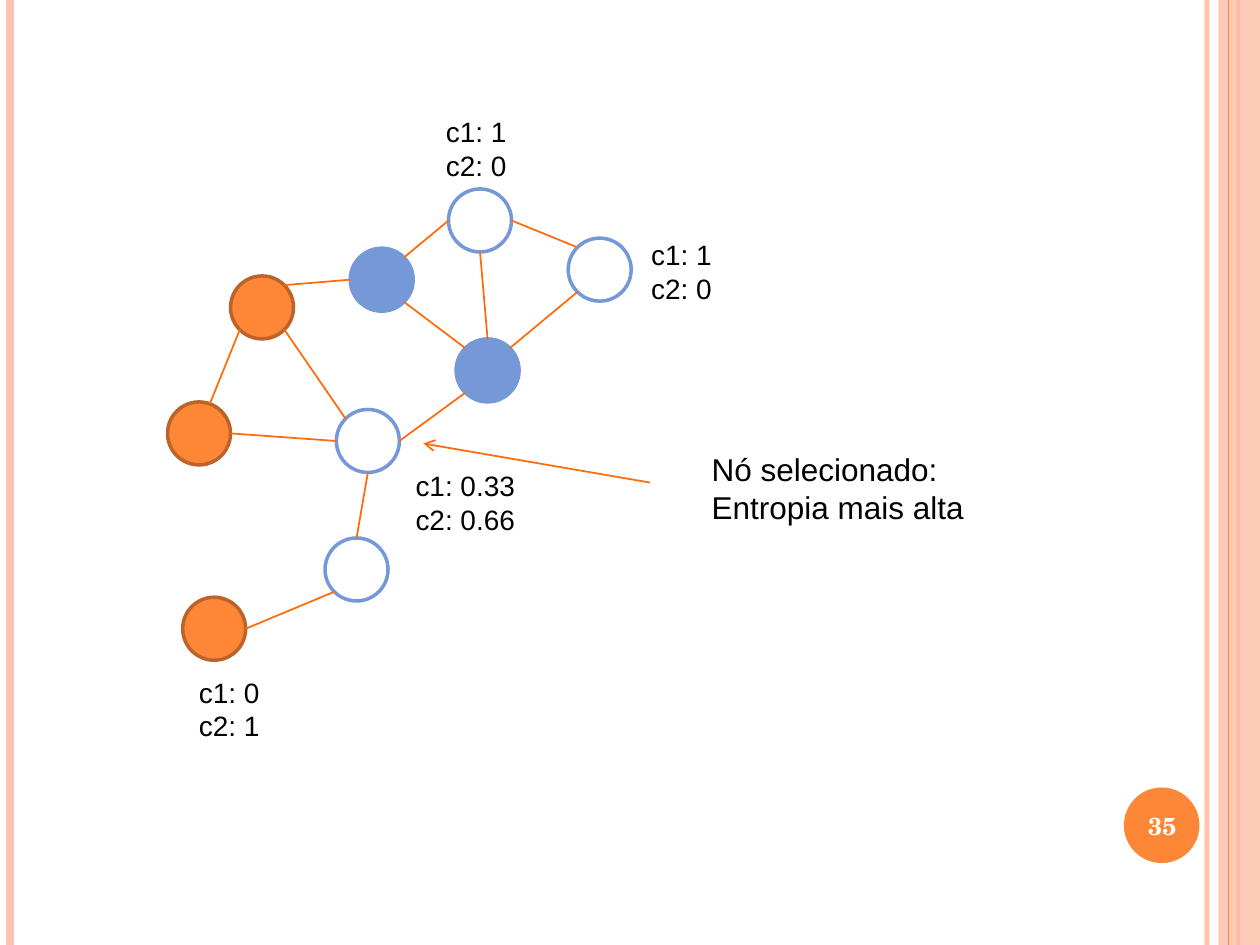
from math import cos, radians, sin

from lxml import etree
from pptx import Presentation
from pptx.dml.color import RGBColor
from pptx.enum.shapes import MSO_CONNECTOR, MSO_SHAPE
from pptx.enum.text import MSO_ANCHOR, MSO_AUTO_SIZE, PP_ALIGN
from pptx.oxml.ns import qn
from pptx.util import Inches, Pt

STRAIGHT = MSO_CONNECTOR.STRAIGHT
OVAL, RECTANGLE = MSO_SHAPE.OVAL, MSO_SHAPE.RECTANGLE
MIDDLE, CENTER = MSO_ANCHOR.MIDDLE, PP_ALIGN.CENTER
FIT_SHAPE = MSO_AUTO_SIZE.SHAPE_TO_FIT_TEXT

ORANGE = RGBColor(0xFE, 0x86, 0x37)
BROWN = RGBColor(0xBC, 0x63, 0x29)
BLUE = RGBColor(0x75, 0x98, 0xD9)
PINK = RGBColor(0xFE, 0xC3, 0xAE)
EDGE = RGBColor(0xFF, 0x6B, 0x0A)
BLACK = RGBColor(0, 0, 0)
WHITE = RGBColor(0xFF, 0xFF, 0xFF)

SLIDE_WIDTH, SLIDE_HEIGHT = 10, 7.5
NODE_SIZE = 0.5

BACK_STRIPES = [(9.58, PINK, 3, 93), (0.08, PINK, 4.5, 100), (9.83, ORANGE, 1.5, 100)]
FRONT_STRIPE = (9.75, ORANGE, 0.75, 100)
BAND = (9.67, 0, 0.33, SLIDE_HEIGHT)
BADGE = (8.92, 6.25, 0.6, 0.6)
PAGE_NUMBER = ("35", (8.89, 6.27, 0.67, 0.57))

NODE_STYLES = {"class 2": (ORANGE, BROWN), "class 1": (BLUE, BLUE), "open": (None, BLUE)}
NODES = {
    "upper orange": (1.83, 2.19, "class 2"),
    "left orange": (1.33, 3.19, "class 2"),
    "bottom orange": (1.45, 4.74, "class 2"),
    "upper blue": (2.78, 1.97, "class 1"),
    "lower blue": (3.62, 2.69, "class 1"),
    "top": (3.56, 1.5, "open"),
    "right": (4.51, 1.89, "open"),
    "selected": (2.67, 3.25, "open"),
    "lower": (2.58, 4.27, "open"),
}
EDGES = [
    ("upper orange", 315, "selected", 135),
    ("left orange", 0, "selected", 180),
    ("upper orange", 45, "upper blue", 180),
    ("upper blue", 315, "lower blue", 135),
    ("selected", 0, "lower blue", 225),
    ("upper blue", 45, "top", 180),
    ("upper orange", 225, "left orange", 70),
    ("lower blue", 45, "right", 225),
    ("top", 0, "right", 135),
    ("top", 270, "lower blue", 90),
    ("lower", 90, "selected", 270),
    ("bottom orange", 0, "lower", 225),
]
POINTER = ((5.16, 3.83), (3.36, 3.52))

LABELS = [
    (["c1: 1", "c2: 0"], (3.44, 0.86, 0.78, 0.64), 16),
    (["c1: 0.33", "c2: 0.66"], (3.2, 3.67, 1.26, 0.64), 16),
    (["c1: 1", "c2: 0"], (5.07, 1.84, 0.78, 0.64), 16),
    (["Nó selecionado: Entropia mais alta"], (5.55, 3.52, 2.66, 0.71), 18),
    (["c1: 0", "c2: 1"], (1.48, 5.31, 0.78, 0.64), 16),
]


def set_alpha(owner, percent):
    color = next(owner.iter(qn("a:srgbClr")))
    etree.SubElement(color, qn("a:alpha")).set("val", str(percent * 1000))


def add_line(page, start, end, color, width):
    line = page.shapes.add_connector(STRAIGHT, *map(Inches, (*start, *end)))
    line.line.color.rgb = color
    line.line.width = Pt(width)
    etree.SubElement(line.element.spPr, qn("a:effectLst"))
    return line


def add_stripe(page, x, color, width, alpha):
    stripe = add_line(page, (x, 0), (x, SLIDE_HEIGHT), color, width)
    if alpha < 100:
        set_alpha(stripe.element.spPr, alpha)


def add_figure(page, kind, place, fill, outline=None):
    figure = page.shapes.add_shape(kind, *map(Inches, place))
    figure.shadow.inherit = False
    if fill is None:
        figure.fill.background()
    else:
        figure.fill.solid()
        figure.fill.fore_color.rgb = fill
    if outline is None:
        figure.line.fill.background()
    else:
        figure.line.color.rgb = outline
        figure.line.width = Pt(2)
    return figure


def add_text(page, lines, place, frame_format, para_format, font_format, color):
    box = page.shapes.add_textbox(*map(Inches, place))
    frame = box.text_frame
    for name, value in {"word_wrap": True, **frame_format}.items():
        setattr(frame, name, value)
    for index, line in enumerate(lines):
        para = frame.paragraphs[0] if index == 0 else frame.add_paragraph()
        for name, value in para_format.items():
            setattr(para, name, value)
        span = para.add_run()
        span.text = line
        for name, value in font_format.items():
            setattr(span.font, name, value)
        span.font.color.rgb = color


def rim_point(node, degrees):
    left, top, _ = NODES[node]
    radius = NODE_SIZE / 2
    angle = radians(degrees)
    return left + radius * (1 + cos(angle)), top + radius * (1 - sin(angle))


def main():
    deck = Presentation()
    deck.slide_width, deck.slide_height = Inches(SLIDE_WIDTH), Inches(SLIDE_HEIGHT)
    page = deck.slides.add_slide(deck.slide_layouts[6])

    for stripe in BACK_STRIPES:
        add_stripe(page, *stripe)
    band = add_figure(page, RECTANGLE, BAND, PINK)
    set_alpha(band.element.spPr, 87)
    add_stripe(page, *FRONT_STRIPE)

    add_figure(page, OVAL, BADGE, ORANGE)
    number, place = PAGE_NUMBER
    number_font = {"name": "TeX Gyre Schola", "size": Pt(14), "bold": True}
    add_text(page, [number], place, {"vertical_anchor": MIDDLE},
             {"alignment": CENTER}, number_font, WHITE)

    for left, top, style in NODES.values():
        add_figure(page, OVAL, (left, top, NODE_SIZE, NODE_SIZE), *NODE_STYLES[style])
    for source, source_angle, target, target_angle in EDGES:
        add_line(page, rim_point(source, source_angle), rim_point(target, target_angle), EDGE, 1)

    pointer = add_line(page, *POINTER, EDGE, 1)
    outline = pointer.element.spPr.find(qn("a:ln"))
    etree.SubElement(outline, qn("a:tailEnd")).set("type", "arrow")

    for lines, place, size in LABELS:
        add_text(page, lines, place, {"auto_size": FIT_SHAPE}, {},
                 {"name": "Arial", "size": Pt(size)}, BLACK)

    deck.save("out.pptx")


if __name__ == "__main__":
    main()
